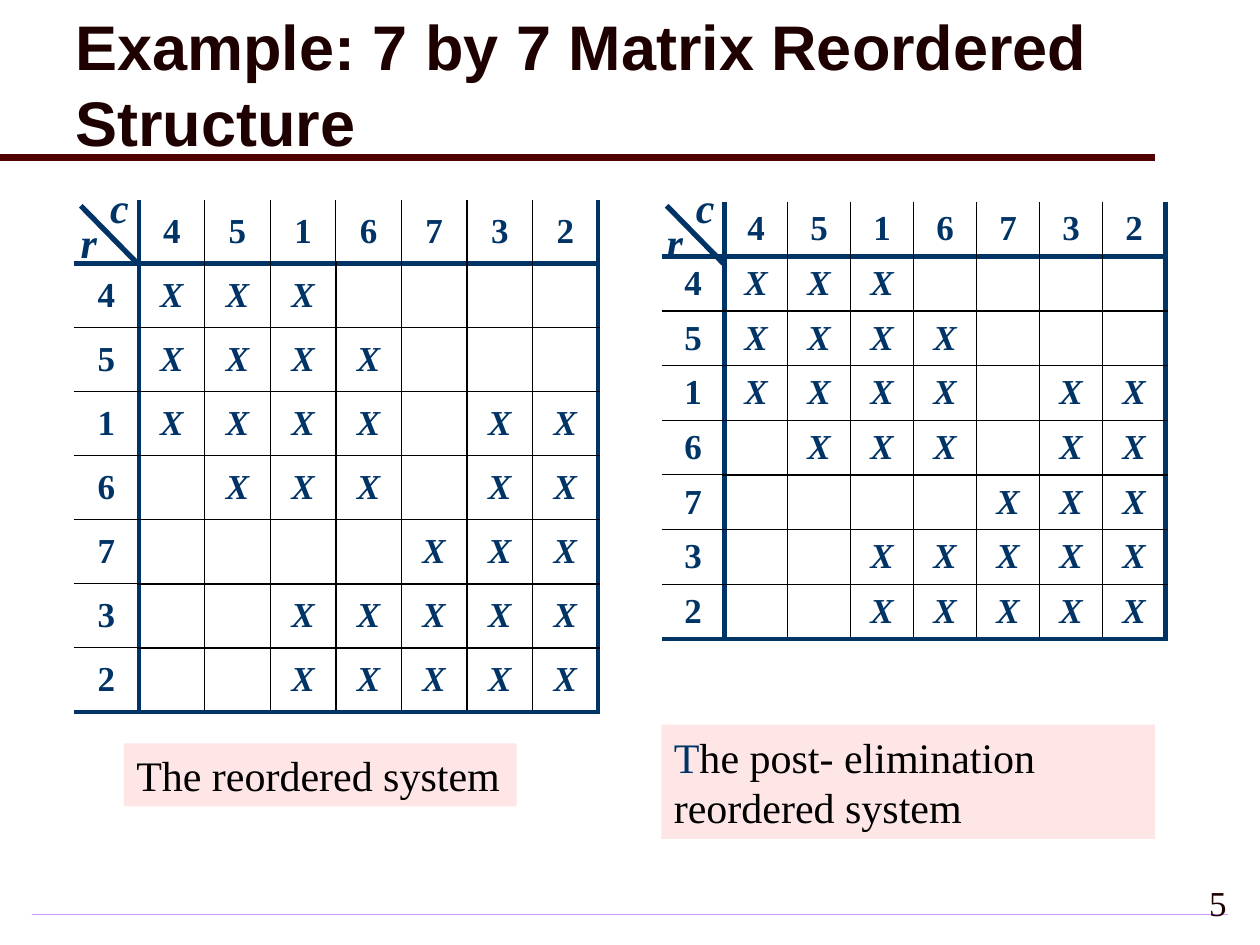
import pptx
import pptx.util
import pptx.dml.color
import pptx.enum.shapes
import pptx.enum.text
import pptx.oxml
import pptx.oxml.ns

UNIT = pptx.util.Inches(10) / 120
NAVY, MAROON, INK, BLACK, PINK = "003366", "500000", "1E0000", "000000", "FFE6E6"
SERIF = dict(name="Times New Roman", size=pptx.util.Pt(24))
LABEL = dict(SERIF, bold=True, italic=True)
ENTRY = dict(SERIF, size=pptx.util.Pt(20), bold=True)
ALIGN = pptx.enum.text.PP_ALIGN
MIDDLE = pptx.enum.text.MSO_ANCHOR.MIDDLE
RECT = pptx.enum.shapes.MSO_SHAPE.RECTANGLE

ORDER = "4516732"
PATTERN = ["XXX....", "XXXX...", "XXXX.XX", ".XXX.XX", "....XXX", "..XXXXX", "..XXXXX"]


def grid(*cells):
    return [round(c * UNIT) for c in cells]


def rgb(value):
    return pptx.dml.color.RGBColor.from_string(value)


def add_run(p, text, color, style):
    r = p.add_run()
    r.text = text
    r.font.color.rgb = rgb(color)
    for key, value in style.items():
        setattr(r.font, key, value)


def write(sp, runs, style, align=ALIGN.LEFT, middle=True, wrap=True):
    tf = sp.text_frame
    tf.word_wrap = wrap
    tf.vertical_anchor = MIDDLE if middle else pptx.enum.text.MSO_ANCHOR.TOP
    p = tf.paragraphs[0]
    p.alignment = align
    for text, color in runs:
        add_run(p, text, color, style)


def text(s, box, runs, style, **layout):
    write(s.shapes.add_textbox(*grid(*box)), runs, style, **layout)


def line(s, ends, color, width):
    cn = s.shapes.add_connector(pptx.enum.shapes.MSO_CONNECTOR.STRAIGHT, *grid(*ends))
    cn.line.color.rgb = rgb(color)
    cn.line.width = pptx.util.Pt(width)
    pptx.oxml.ns.qn("a:effectLst")
    cn._element.spPr.append(pptx.oxml.parse_xml(
        f'<a:effectLst {pptx.oxml.ns.nsdecls("a")}/>'))


def rectangle(s, box):
    sp = s.shapes.add_shape(RECT, *grid(*box))
    sp.shadow.inherit = False
    sp.line.fill.background()
    return sp


def caption(s, box, runs, wrap):
    sp = rectangle(s, box)
    sp.fill.solid()
    sp.fill.fore_color.rgb = rgb(PINK)
    write(sp, runs, SERIF, wrap=wrap)


def footer(s, box):
    x, y, w, h = box
    sp = rectangle(s, (x, y + 4, w, 0.1))
    sp.fill.gradient()
    for stop, color in zip(sp.fill.gradient_stops, ("CC99FF", "F3EBFF")):
        stop.color.rgb = rgb(color)
    lin = sp._element.spPr.find(".//" + pptx.oxml.ns.qn("a:lin"))
    lin.getparent().replace(lin, pptx.oxml.parse_xml(
        f'<a:path {pptx.oxml.ns.nsdecls("a")} path="shape">'
        '<a:fillToRect l="50000" t="50000" r="50000" b="50000"/></a:path>'))
    text(s, (x + w - 24, y, 25, h), [("5", INK)],
         dict(SERIF, size=pptx.util.Pt(20)), align=ALIGN.RIGHT)


def header(s, box):
    line(s, (0, 15, 110, 15), MAROON, 4)
    text(s, box, [("Example: 7 by 7 Matrix Reordered Structure", INK)],
         dict(name="Arial", size=pptx.util.Pt(36), bold=True))


def edge_xml(side, index, in_header):
    if index == 0:
        width, fill = 0, "<a:noFill/>"
    else:
        thick = index in (1, len(ORDER) + 1)
        width = 3 if thick else 0.75 if in_header else 1
        fill = f'<a:solidFill><a:srgbClr val="{NAVY if thick else BLACK}"/></a:solidFill>'
    return (f'<a:ln{side} {pptx.oxml.ns.nsdecls("a")} w="{pptx.util.Pt(width)}">'
            f'{fill}</a:ln{side}>')


def matrix(s, box):
    n = len(ORDER) + 1
    x, y, w, h = grid(*box)
    tb = s.shapes.add_table(n, n, x, y, w, h).table
    tb.first_row = tb.horz_banding = False
    rows = ["." + ORDER] + [label + marks for label, marks in zip(ORDER, PATTERN)]
    for i, row in enumerate(rows):
        tb.rows[i].height = h // n
        tb.columns[i].width = w // n
        for j, mark in enumerate(row):
            cell = tb.cell(i, j)
            cell.fill.background()
            cell.vertical_anchor = MIDDLE
            edges = [("L", j, i == 0), ("R", j + 1, i == 0),
                     ("T", i, j == 0), ("B", i + 1, j == 0)]
            for k, edge in enumerate(edges):
                cell._tc.tcPr.insert(k, pptx.oxml.parse_xml(edge_xml(*edge)))
            if mark != ".":
                p = cell.text_frame.paragraphs[0]
                p.alignment = ALIGN.CENTER
                add_run(p, mark, NAVY, dict(ENTRY, italic=mark == "X"))


def corner(s, x, y):
    for label, dx, dy in (("r", 0, 3.3), ("c", 2.8, 0)):
        text(s, (x + dx, y + dy, 2.5, 6), [(label, NAVY)], LABEL, middle=False)
    line(s, (x + 6.6, y + 8.4, x + 1.2, y + 2.9), NAVY, 3)


def main():
    prs = pptx.Presentation()
    prs.slide_width, prs.slide_height = grid(120, 90)
    s = prs.slides.add_slide(prs.slide_layouts[6])
    footer(s, (3, 83, 114, 6))
    header(s, (6, 0.1, 114, 15.7))
    matrix(s, (7, 19, 50, 48.8))
    caption(s, (11.8, 70.8, 37.4, 6), [("The reordered system", BLACK)], False)
    matrix(s, (63, 19.2, 48, 41.6))
    caption(s, (63, 69, 47, 10.9),
            [("T", NAVY), ("he post- elimination reordered system", BLACK)], True)
    for x in (6.5, 62.3):
        corner(s, x, 16.7)
    prs.save("out.pptx")


if __name__ == "__main__":
    main()
